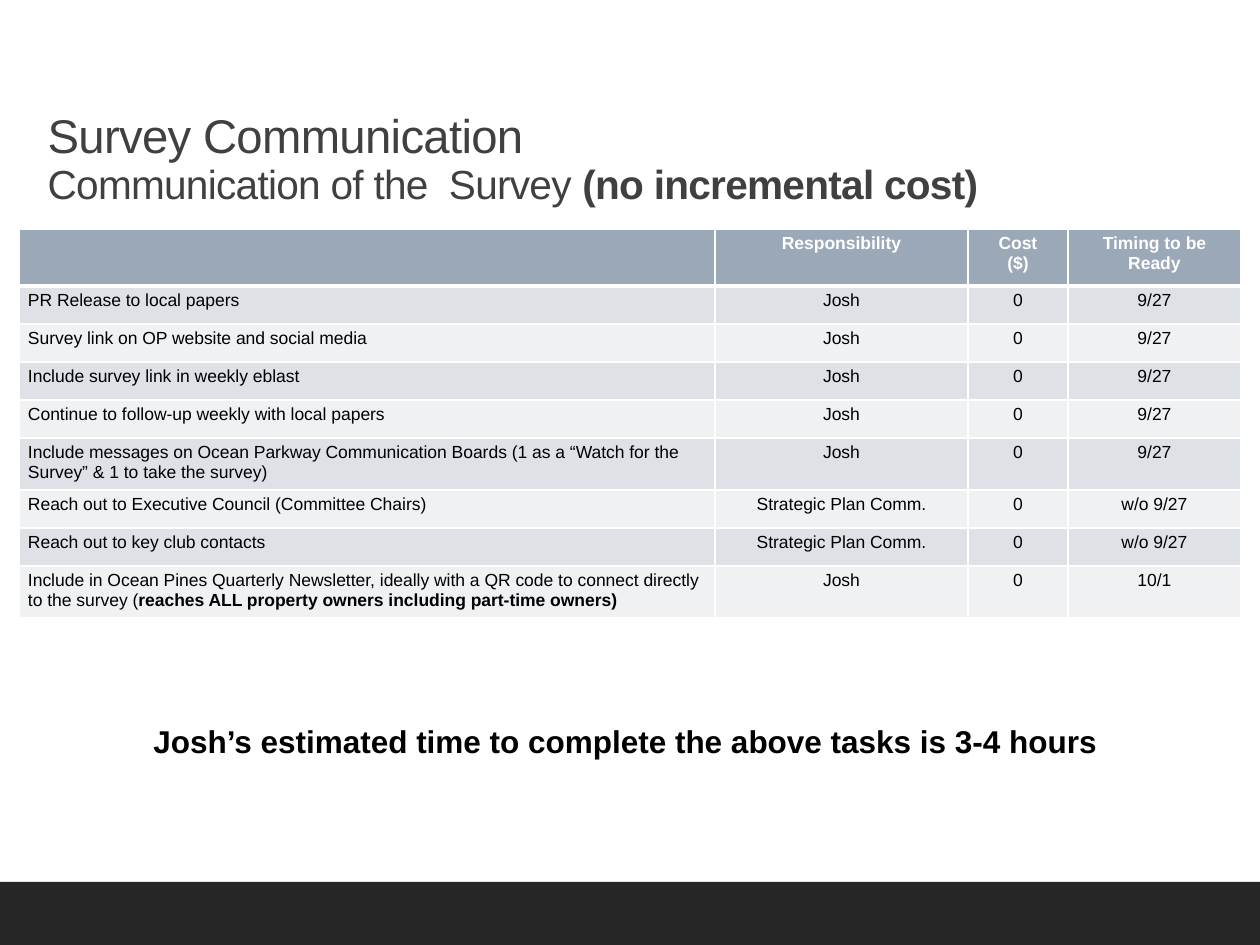
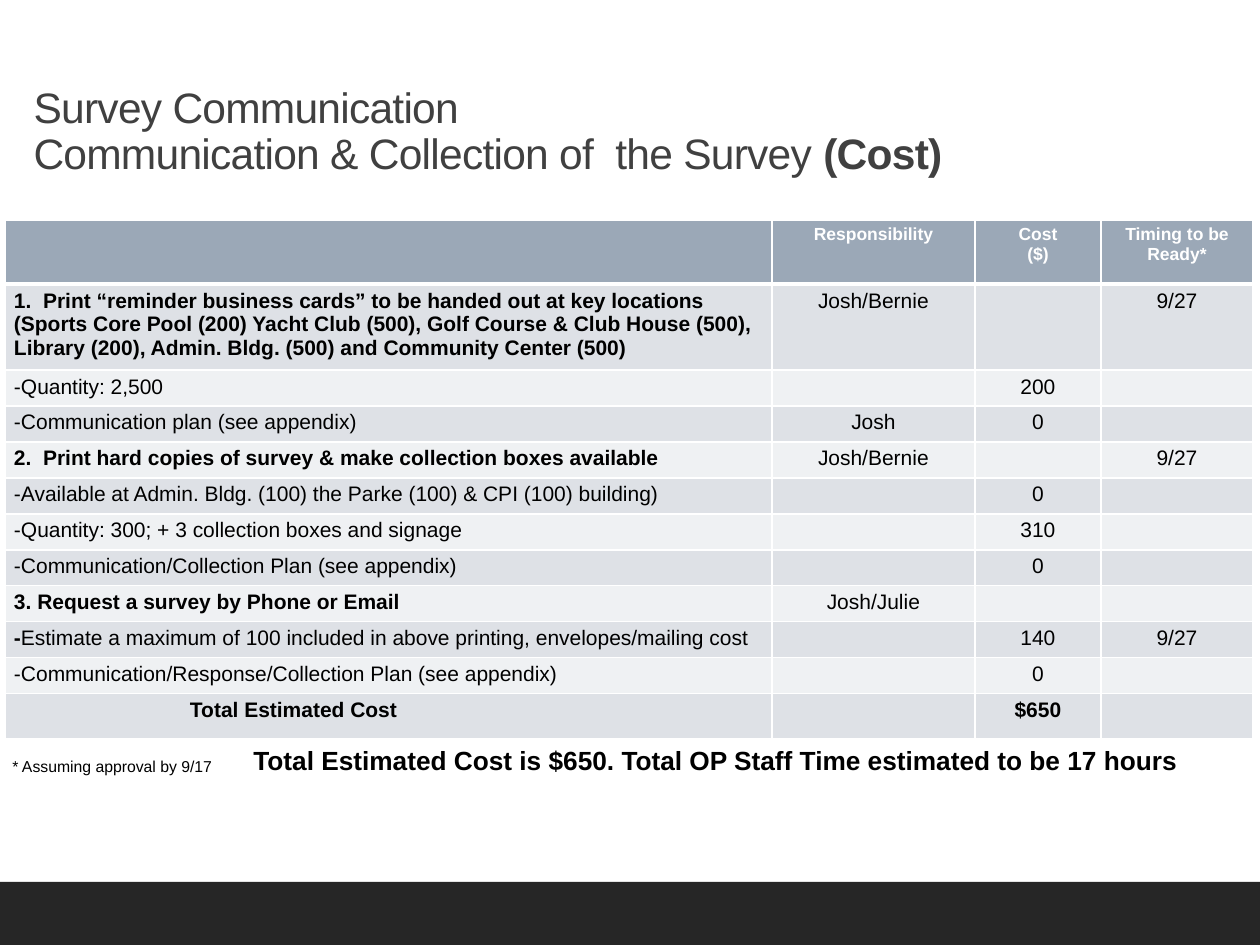
from dataclasses import dataclass

from lxml import etree
from pptx import Presentation
from pptx.dml.color import RGBColor
from pptx.enum.shapes import MSO_SHAPE
from pptx.enum.text import MSO_ANCHOR, MSO_AUTO_SIZE, PP_ALIGN
from pptx.oxml.ns import qn
from pptx.util import Emu, Pt

RECTANGLE = MSO_SHAPE.RECTANGLE
BOTTOM = MSO_ANCHOR.BOTTOM
NO_FIT = MSO_AUTO_SIZE.NONE
LEFT, CENTER = PP_ALIGN.LEFT, PP_ALIGN.CENTER
EMU_PER_PX = 914400 / 126
PAGE_WIDTH, PAGE_HEIGHT = 1260, 945
BAND_HEIGHT = 63


@dataclass(frozen=True)
class Theme:
    """Colours, font and type sizes shared by the slides."""
    font: str = "Arial"
    title: str = "404040"
    body: str = "000000"
    white: str = "FFFFFF"
    band: str = "262626"
    header: str = "9BA8B7"
    odd_row: str = "DEE1E6"
    even_row: str = "EFF1F3"
    header_size: float = 10
    title_tracking: int = -40
    thin: float = 1
    thick: float = 3


THEME = Theme()

FREE_ROWS = [
    ("", "Responsibility", "Cost\n($)", "Timing to be Ready"),
    ("PR Release to local papers", "Josh", "0", "9/27"),
    ("Survey link on OP website and social media", "Josh", "0", "9/27"),
    ("Include survey link in weekly eblast", "Josh", "0", "9/27"),
    ("Continue to follow-up weekly with local papers", "Josh", "0", "9/27"),
    ("Include messages on Ocean Parkway Communication Boards (1 as a “Watch for the "
     "Survey” & 1 to take the survey)", "Josh", "0", "9/27"),
    ("Reach out to Executive Council (Committee Chairs)", "Strategic Plan Comm.", "0", "w/o 9/27"),
    ("Reach out to key club contacts", "Strategic Plan Comm.", "0", "w/o 9/27"),
    ("Include in Ocean Pines Quarterly Newsletter, ideally with a QR code to connect directly "
     "to the survey (**reaches ALL property owners including part-time owners)**",
     "Josh", "0", "10/1"),
]

COST_ROWS = [
    ("", "Responsibility", "Cost\n($)", "Timing to be Ready*"),
    ("**1.  Print “reminder business cards” to be handed out at key locations "
     "(Sports Core Pool (200) Yacht Club (500), Golf Course & Club House (500), "
     "Library (200), Admin. Bldg. (500) and Community Center (500)**", "Josh/Bernie", "", "9/27"),
    ("-Quantity: 2,500", "", "200", ""),
    ("-Communication plan (see appendix)", "Josh", "0", ""),
    ("**2.  Print hard copies of survey & make collection boxes available**",
     "Josh/Bernie", "", "9/27"),
    ("-Available at Admin. Bldg. (100) the Parke (100) & CPI (100) building)", "", "0", ""),
    ("-Quantity: 300; + 3 collection boxes and signage", "", "310", ""),
    ("-Communication/Collection Plan (see appendix)", "", "0", ""),
    ("**3. Request a survey by Phone or Email**", "Josh/Julie", "", ""),
    ("**-**Estimate a maximum of 100 included in above printing, envelopes/mailing cost",
     "", "140", "9/27"),
    ("-Communication/Response/Collection Plan (see appendix)", "", "0", ""),
    ("**Total Estimated Cost**", "", "**$650**", ""),
]


def px(length):
    """Turn whole pixels into EMU."""
    return Emu(round(length * EMU_PER_PX))


def add_spans(para, text, size, colour, bold=False, tracking=0):
    """Append runs to a paragraph, with ** switching bold on and off."""
    for index, part in enumerate(text.split("**")):
        if not part:
            continue
        span = para.add_run()
        span.text = part
        span.font.name = THEME.font
        span.font.size = Pt(size)
        span.font.bold = bold or index % 2 == 1
        span.font.color.rgb = RGBColor.from_string(colour)
        if tracking:
            span.font._element.set("spc", str(tracking))


def add_title(page, box, lines, sizes, bottom_inset=6):
    """Place the title placeholder and write its lines, one size for each."""
    title = page.shapes.title
    title.left, title.top, title.width, title.height = map(px, box)
    frame = title.text_frame
    frame.auto_size = NO_FIT
    frame.word_wrap = True
    frame.vertical_anchor = BOTTOM
    frame.margin_top = 0
    frame.margin_bottom = px(bottom_inset)
    para = frame.paragraphs[0]
    para.alignment = LEFT
    para.line_spacing = 0.9
    for index, (line, size) in enumerate(zip(lines, sizes)):
        if index:
            para.add_line_break()
            etree.SubElement(para._p[-1], qn("a:rPr"), sz=str(round(size * 100)))
        add_spans(para, line, size, THEME.title, tracking=THEME.title_tracking)


def add_borders(cell, top, bottom):
    """Draw white lines on the four sides of a cell."""
    properties = cell._tc.get_or_add_tcPr()
    for side, width in zip("LRTB", (THEME.thin, THEME.thin, top, bottom)):
        line = etree.SubElement(properties, qn("a:ln" + side), w=str(Pt(width)))
        fill = etree.SubElement(line, qn("a:solidFill"))
        etree.SubElement(fill, qn("a:srgbClr"), val=THEME.white)


def fill_cell(cell, text, row, column, size):
    """Write and format one table cell according to its row and column."""
    is_header = row == 0
    add_borders(cell, THEME.thick if row == 1 else THEME.thin,
                THEME.thick if is_header else THEME.thin)
    cell.fill.solid()
    shade = THEME.header if is_header else (THEME.odd_row if row % 2 else THEME.even_row)
    cell.fill.fore_color.rgb = RGBColor.from_string(shade)
    cell.margin_left = cell.margin_right = px(9)
    cell.margin_top = cell.margin_bottom = px(5)
    cell.text_frame.text = "\n" * text.count("\n")
    for para, line in zip(cell.text_frame.paragraphs, text.split("\n")):
        para.alignment = CENTER if column else LEFT
        add_spans(para, line, THEME.header_size if is_header else size,
                  THEME.white if is_header else THEME.body, bold=is_header)
        etree.SubElement(para._p, qn("a:endParaRPr"), sz=str(size * 100))


def add_task_table(page, left, top, widths, heights, rows, size):
    """Build the table of tasks and return it."""
    table = page.shapes.add_table(len(rows), len(widths), px(left), px(top),
                                  px(sum(widths)), px(sum(heights))).table
    table.horz_banding = False
    for column, width in zip(table.columns, widths):
        column.width = px(width)
    for row, height in zip(table.rows, heights):
        row.height = px(height)
    for row, texts in enumerate(rows):
        for column, text in enumerate(texts):
            fill_cell(table.cell(row, column), text, row, column, size)
    return table


def add_note(page, box, text, size, bold=False):
    """Add a single line of text below the table."""
    frame = page.shapes.add_textbox(*map(px, box)).text_frame
    frame.word_wrap = False
    add_spans(frame.paragraphs[0], text, size, THEME.body, bold)


def add_page(deck):
    """Add a title-only page with the dark band at its foot."""
    page = deck.slides.add_slide(deck.slide_layouts[5])
    band = page.shapes.add_shape(RECTANGLE, 0, px(PAGE_HEIGHT - BAND_HEIGHT),
                                 px(PAGE_WIDTH), px(BAND_HEIGHT))
    band.shadow.inherit = False
    band.fill.solid()
    band.fill.fore_color.rgb = RGBColor.from_string(THEME.band)
    band.line.fill.background()
    return page


def build_free_page(deck):
    """Build the page of tasks without incremental cost."""
    page = add_page(deck)
    add_title(page, (35, 60, 1227, 154),
              ("Survey Communication", "Communication of the  Survey **(no incremental cost)**"),
              (27, 23.2))
    add_task_table(page, 19, 229, (696, 253, 100, 173),
                   (57, 38, 38, 38, 38, 52, 38, 38, 52), FREE_ROWS, 10)
    add_note(page, (141, 716, 979, 50),
             "Josh’s estimated time to complete the above tasks is 3-4 hours", 18, True)


def build_cost_page(deck):
    """Build the page of tasks with their cost."""
    page = add_page(deck)
    add_title(page, (21, 91, 1118, 150),
              ("Survey Communication", "Communication & Collection of  the Survey **(Cost)**"),
              (24.3, 24.3), bottom_inset=62)
    table = add_task_table(page, 5, 220, (767, 203, 126, 152),
                           (64, 86, *[36] * 9, 45), COST_ROWS, 12)
    table.cell(len(COST_ROWS) - 1, 0).margin_left = px(185)
    add_note(page, (0, 751, 228, 32), "* Assuming approval by 9/17", 9)
    add_note(page, (241, 738, 965, 44),
             "Total Estimated Cost is $650. Total OP Staff Time estimated to be 17 hours", 15, True)


def main():
    """Build both pages and save the deck."""
    deck = Presentation()
    deck.slide_width, deck.slide_height = px(PAGE_WIDTH), px(PAGE_HEIGHT)
    build_free_page(deck)
    build_cost_page(deck)
    deck.save("out.pptx")


if __name__ == "__main__":
    main()
